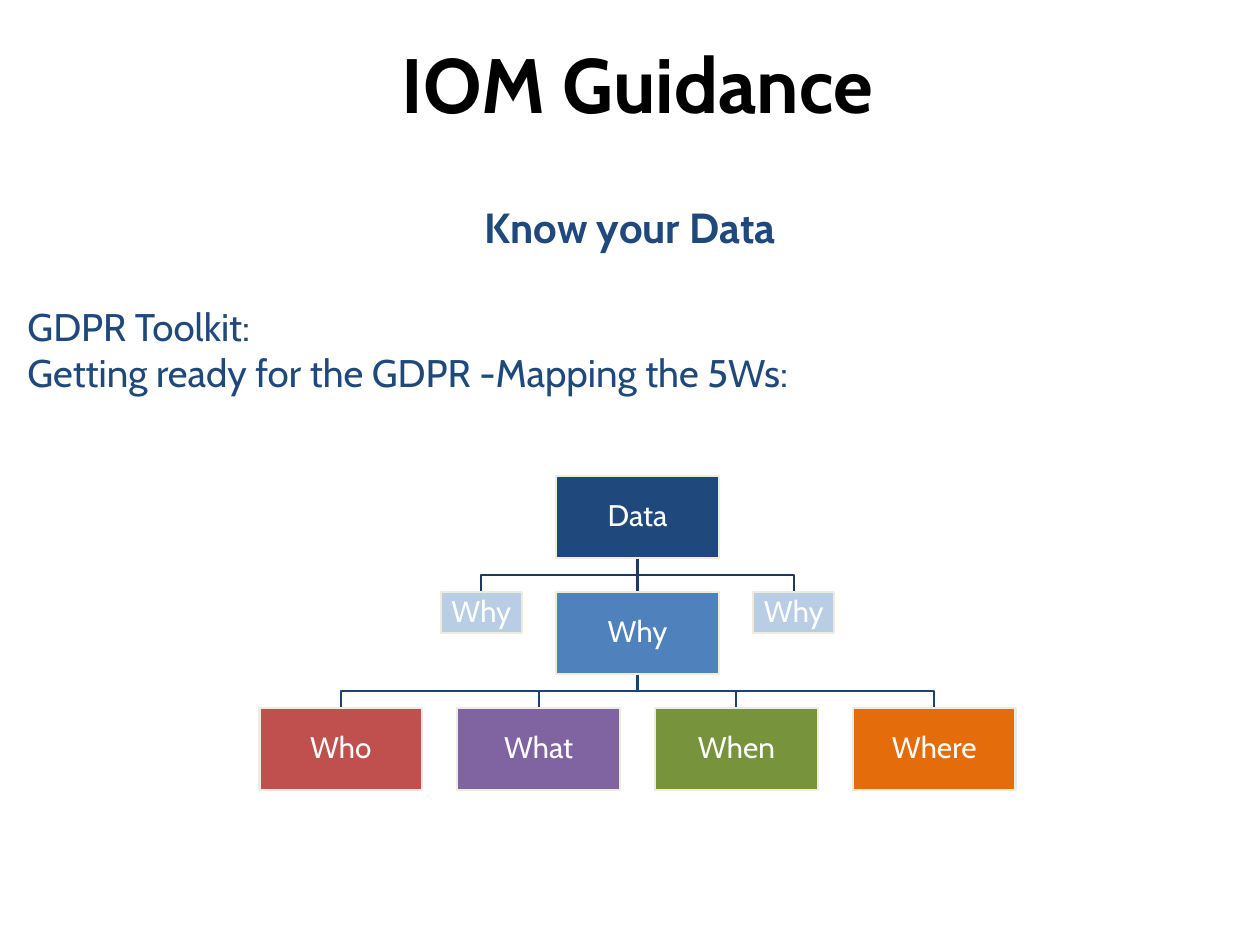
"""Build the data mapping slide with its 5Ws hierarchy."""
from lxml import etree
from pptx import Presentation
from pptx.dml.color import RGBColor
from pptx.enum.shapes import MSO_CONNECTOR, MSO_SHAPE
from pptx.enum.text import MSO_ANCHOR, PP_ALIGN
from pptx.oxml.ns import qn
from pptx.util import Inches, Pt

RECTANGLE = MSO_SHAPE.RECTANGLE
STRAIGHT = MSO_CONNECTOR.STRAIGHT
LEFT, CENTER = PP_ALIGN.LEFT, PP_ALIGN.CENTER
TOP, MIDDLE, BOTTOM = MSO_ANCHOR.TOP, MSO_ANCHOR.MIDDLE, MSO_ANCHOR.BOTTOM

BLACK = RGBColor(0x00, 0x00, 0x00)
WHITE = RGBColor(0xFF, 0xFF, 0xFF)
NAVY = RGBColor(0x1F, 0x49, 0x7D)
BLUE = RGBColor(0x4F, 0x81, 0xBD)
PALE_BLUE = RGBColor(0xB9, 0xCD, 0xE5)
RED = RGBColor(0xC0, 0x50, 0x4D)
PURPLE = RGBColor(0x80, 0x64, 0xA2)
GREEN = RGBColor(0x77, 0x93, 0x3C)
ORANGE = RGBColor(0xE4, 0x6C, 0x0A)
CREAM = RGBColor(0xEE, 0xEC, 0xE1)
UPPER_LINE = RGBColor(0x19, 0x3A, 0x64)
LOWER_LINE = RGBColor(0x1C, 0x42, 0x71)


class HierarchySlide:
    """Hold the style, the tree grid and the current slide."""

    font = "Cabin"
    line_width = Pt(1.25)
    axis, first_row = Inches(5.06), Inches(3.78)
    column, row = Inches(1.57), Inches(0.92)
    box_width, box_height = Inches(1.29), Inches(0.65)

    def __init__(self, deck):
        self.slide = deck.slides.add_slide(deck.slide_layouts[6])

    def style_text(self, paragraph, text, size, color, bold=False, align=LEFT):
        paragraph.text = text
        paragraph.alignment = align
        for run in paragraph.runs:
            run.font.name = self.font
            run.font.size = Pt(size)
            run.font.bold = bold
            run.font.color.rgb = color

    def text_block(self, left, top, width, height, lines, anchor=TOP):
        box = self.slide.shapes.add_textbox(
            *(Inches(length) for length in (left, top, width, height)))
        frame = box.text_frame
        frame.word_wrap = True
        frame.vertical_anchor = anchor
        for index, (text, size, color, bold, align, gap) in enumerate(lines):
            paragraph = frame.add_paragraph() if index else frame.paragraphs[0]
            self.style_text(paragraph, text, size, color, bold, align)
            if gap:
                paragraph.space_before = Pt(gap)

    def place(self, column, row):
        return (self.axis + round(column * self.column),
                self.first_row + round(row * self.row))

    def node(self, label, color, column, row, scale=1):
        center, top = self.place(column, row)
        width, height = round(self.box_width * scale), round(self.box_height * scale)
        box = self.slide.shapes.add_shape(
            RECTANGLE, center - width // 2, top, width, height)
        box.shadow.inherit = False
        box.fill.solid()
        box.fill.fore_color.rgb = color
        box.line.color.rgb = CREAM
        box.line.width = self.line_width
        frame = box.text_frame
        frame.word_wrap = True
        frame.vertical_anchor = MIDDLE
        frame.margin_left = frame.margin_right = Inches(0.01)
        frame.margin_top = frame.margin_bottom = Inches(0.01)
        self.style_text(frame.paragraphs[0], label, 17, WHITE, align=CENTER)
        frame.paragraphs[0].line_spacing = 0.9

    def branch(self, column, parent_row, color):
        start_x, parent_top = self.place(0, parent_row)
        end_x, end_y = self.place(column, parent_row + 1)
        start_y = parent_top + self.box_height
        if column:
            bend_y = (start_y + end_y) // 2
            builder = self.slide.shapes.build_freeform(start_x, start_y)
            builder.add_line_segments(
                [(start_x, bend_y), (end_x, bend_y), (end_x, end_y)], close=False)
            link = builder.convert_to_shape()
            link.shadow.inherit = False
            link.fill.background()
        else:
            link = self.slide.shapes.add_connector(
                STRAIGHT, start_x, start_y, end_x, end_y)
        link.line.color.rgb = color
        link.line.width = self.line_width
        if not column:
            etree.SubElement(link._element.spPr, qn("a:effectLst"))


def main():
    deck = Presentation()
    deck.slide_width, deck.slide_height = Inches(10), Inches(7.5)
    page = HierarchySlide(deck)

    page.text_block(0.12, 0.36, 9.88, 0.71, [
        ("IOM Guidance", 44, BLACK, True, CENTER, 0)], BOTTOM)
    page.text_block(0.12, 1.55, 9.76, 1.81, [
        ("Know your Data", 24, NAVY, True, CENTER, 0),
        ("GDPR Toolkit:", 22, NAVY, False, LEFT, 29),
        ("Getting ready for the GDPR -Mapping the 5Ws:", 22, NAVY, False, LEFT, 0)])

    questions = [("Why", PALE_BLUE, -0.79, 0.5), ("Why", BLUE, 0, 1),
                 ("Why", PALE_BLUE, 0.79, 0.5)]
    details = [("Who", RED), ("What", PURPLE), ("When", GREEN), ("Where", ORANGE)]
    detail_columns = [index - (len(details) - 1) / 2 for index in range(len(details))]

    for column in detail_columns:
        page.branch(column, 1, LOWER_LINE)
    for _, _, column, _ in questions:
        page.branch(column, 0, UPPER_LINE)

    page.node("Data", NAVY, 0, 0)
    for label, color, column, scale in questions:
        page.node(label, color, column, 1, scale)
    for (label, color), column in zip(details, detail_columns):
        page.node(label, color, column, 2)

    deck.save("out.pptx")


if __name__ == "__main__":
    main()
